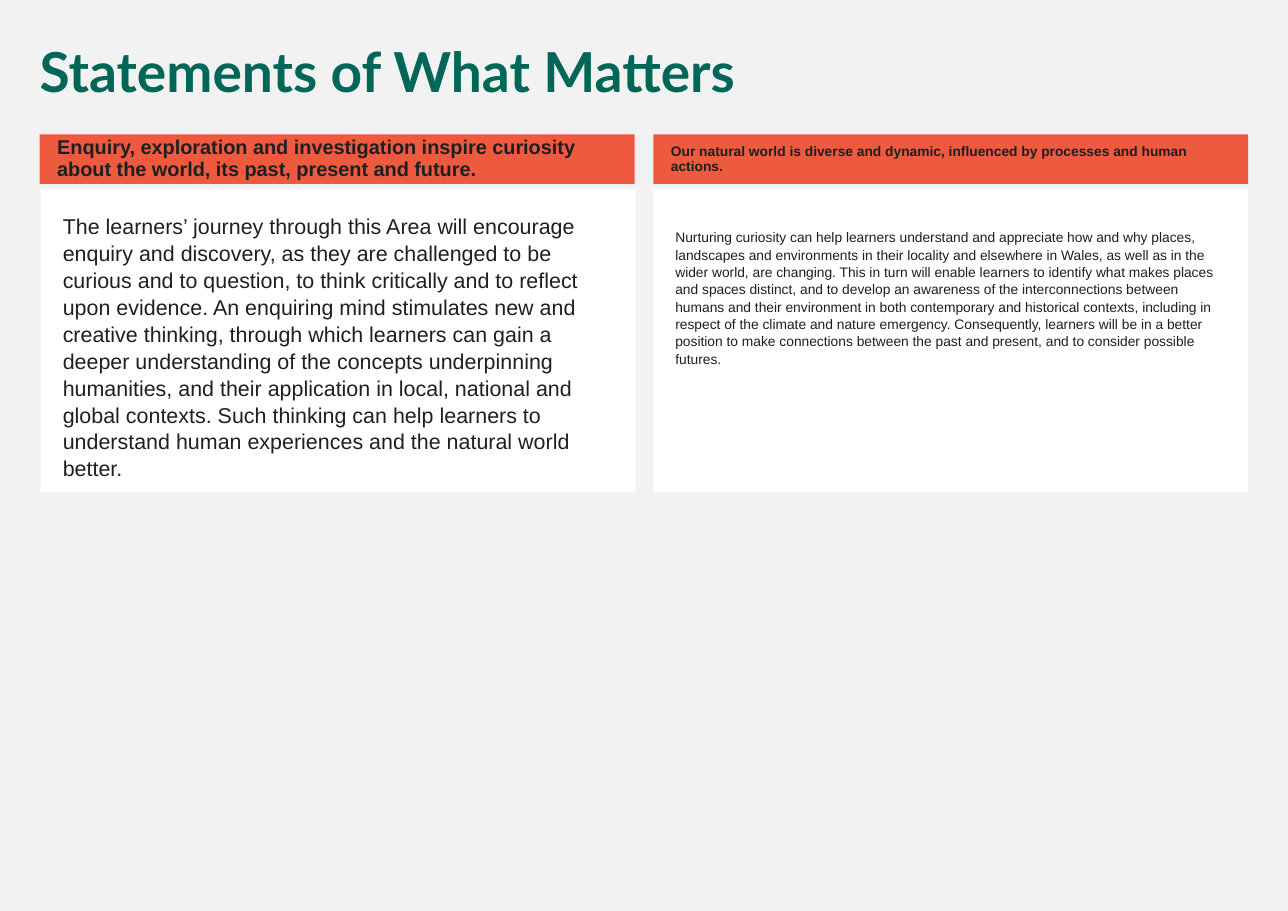
from dataclasses import dataclass

from pptx import Presentation
from pptx.dml.color import RGBColor
from pptx.enum.shapes import MSO_SHAPE
from pptx.enum.text import MSO_ANCHOR, MSO_AUTO_SIZE, PP_ALIGN
from pptx.util import Inches, Pt


@dataclass(frozen=True)
class Theme:
    background: str = "F2F2F2"
    panel: str = "FFFFFF"
    banner: str = "ED5A3E"
    heading: str = "006758"
    ink: str = "1F1F1F"
    heading_font: str = "Lato"
    text_font: str = "Arial"
    title_size: int = 36
    lead_heading_size: int = 13
    lead_body_size: int = 14
    small_size: int = 9


THEME = Theme()
COLUMN_WIDTH = 5.4
STATEMENTS = [
    {
        "heading": "Enquiry, exploration and investigation inspire curiosity about the world, "
                   "its past, present and future.",
        "body": "The learners’ journey through this Area will encourage enquiry and discovery, "
                "as they are challenged to be curious and to question, to think critically and "
                "to reflect upon evidence. An enquiring mind stimulates new and creative thinking, "
                "through which learners can gain a deeper understanding of the concepts "
                "underpinning humanities, and their application in local, national and global "
                "contexts. Such thinking can help learners to understand human experiences and "
                "the natural world better.",
        "heading_left": 0.36,
        "body_left": 0.37,
        "heading_size": THEME.lead_heading_size,
        "body_size": THEME.lead_body_size,
        "body_top_inset": 0.2,
    },
    {
        "heading": "Our natural world is diverse and dynamic, influenced by processes and "
                   "human actions.",
        "body": "Nurturing curiosity can help learners understand and appreciate how and why "
                "places, landscapes and environments in their locality and elsewhere in Wales, "
                "as well as in the wider world, are changing. This in turn will enable learners "
                "to identify what makes places and spaces distinct, and to develop an awareness "
                "of the interconnections between humans and their environment in both "
                "contemporary and historical contexts, including in respect of the climate and "
                "nature emergency. Consequently, learners will be in a better position to make "
                "connections between the past and present, and to consider possible futures.",
        "heading_left": 5.93,
        "body_left": 5.93,
        "heading_size": THEME.small_size,
        "body_size": THEME.small_size,
        "body_top_inset": 0.35,
    },
]


def write_text(frame, text, *, size, color=THEME.ink, font=THEME.text_font, bold=False,
               line_spacing=0.9, anchor=MSO_ANCHOR.TOP, insets=(0.1, 0.05, 0.1, 0.05)):
    frame.word_wrap = True
    frame.auto_size = MSO_AUTO_SIZE.NONE
    frame.vertical_anchor = anchor
    (frame.margin_left, frame.margin_top,
     frame.margin_right, frame.margin_bottom) = map(Inches, insets)
    paragraph = frame.paragraphs[0]
    paragraph.alignment = PP_ALIGN.LEFT
    paragraph.line_spacing = line_spacing
    paragraph.space_before = Pt(0)
    run = paragraph.add_run()
    run.text = text
    run.font.name = font
    run.font.size = Pt(size)
    run.font.bold = bold
    run.font.color.rgb = RGBColor.from_string(color)


def add_panel(slide, left, top, height, fill):
    panel = slide.shapes.add_shape(MSO_SHAPE.RECTANGLE, Inches(left), Inches(top),
                                   Inches(COLUMN_WIDTH), Inches(height))
    panel.shadow.inherit = False
    panel.fill.solid()
    panel.fill.fore_color.rgb = RGBColor.from_string(fill)
    panel.line.fill.background()
    return panel.text_frame


def add_statement(slide, statement):
    body = add_panel(slide, statement["body_left"], 1.72, 2.75, THEME.panel)
    write_text(body, statement["body"], size=statement["body_size"], line_spacing=1.05,
               insets=(0.2, statement["body_top_inset"], 0.2, 0.2))
    heading = add_panel(slide, statement["heading_left"], 1.22, 0.45, THEME.banner)
    write_text(heading, statement["heading"], size=statement["heading_size"], bold=True,
               anchor=MSO_ANCHOR.MIDDLE, insets=(0.16, 0.05, 0.1, 0.05))


def place_title(slide, text):
    title = slide.shapes.title
    title.left, title.top = Inches(0.26), Inches(0.36)
    title.width, title.height = Inches(11.08), Inches(0.65)
    write_text(title.text_frame, text, size=THEME.title_size, color=THEME.heading,
               font=THEME.heading_font, bold=True)


def main():
    presentation = Presentation()
    presentation.slide_width = Inches(11.69)
    presentation.slide_height = Inches(8.27)
    slide = presentation.slides.add_slide(presentation.slide_layouts[5])
    slide.background.fill.solid()
    slide.background.fill.fore_color.rgb = RGBColor.from_string(THEME.background)
    place_title(slide, "Statements of What Matters")
    for statement in STATEMENTS:
        add_statement(slide, statement)
    presentation.save("out.pptx")


if __name__ == "__main__":
    main()
